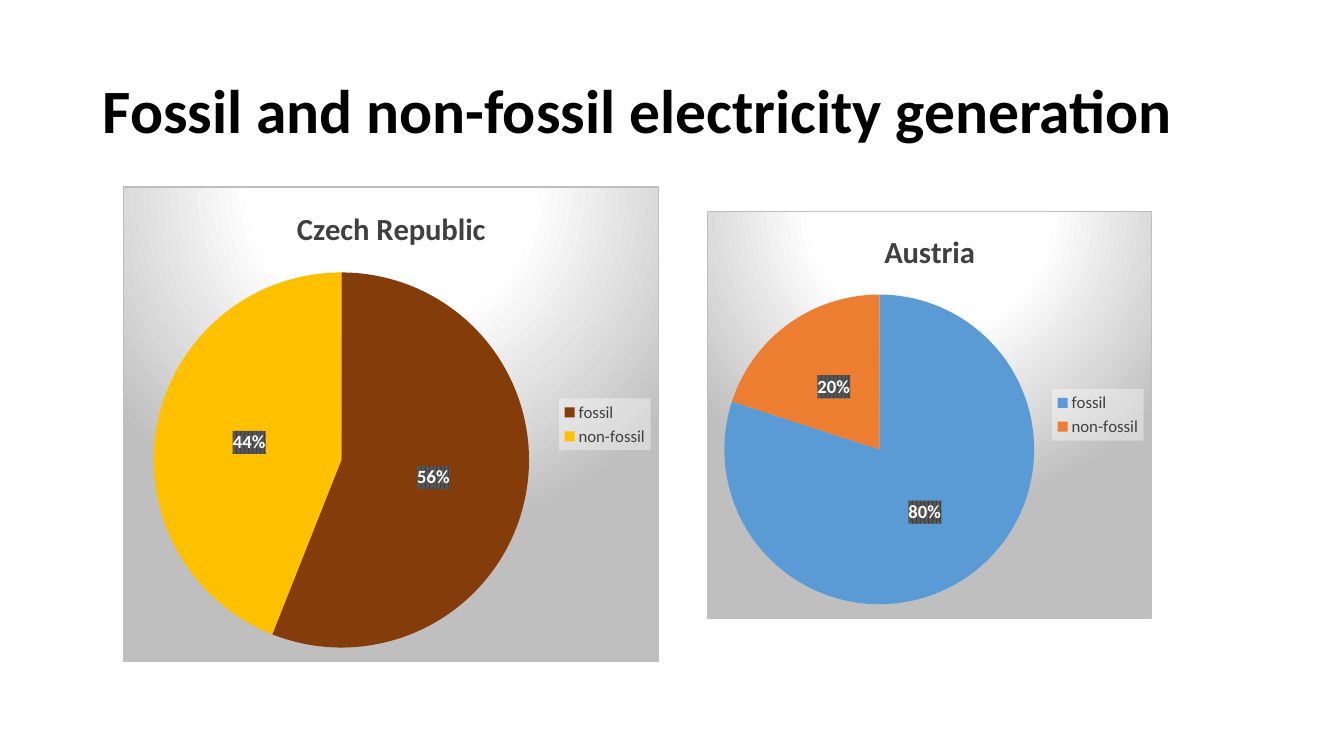
"""Build a slide comparing fossil and non-fossil electricity generation in two pie charts."""
from lxml.etree import fromstring
from pptx import Presentation
from pptx.chart.data import CategoryChartData
from pptx.dml.color import RGBColor
from pptx.enum.chart import XL_CHART_TYPE, XL_LABEL_POSITION, XL_LEGEND_POSITION
from pptx.enum.text import MSO_ANCHOR
from pptx.util import Pt

HEADING = "Fossil and non-fossil electricity generation"
HEADING_BOX = (92, 40, 1150, 145)
SOURCES = ("fossil", "non-fossil")
COUNTRIES = [
    {"name": "Czech Republic", "shares": (56, 44), "colors": ("843C0B", "FFC000"),
     "frame": (122, 185, 532, 472), "pie": (30, 85, 373)},
    {"name": "Austria", "shares": (80, 20), "colors": ("5B9BD5", "ED7D31"),
     "frame": (701, 209, 442, 405), "pie": (17, 83, 308)},
]

THEME = {
    "font": "Calibri",
    "heading": "000000", "text": "404040", "label": "FFFFFF",
    "panel_light": "FFFFFF", "panel_dark": "BFBFBF",
    "label_front": "404040", "label_back": "595959",
    "heading_size": 44, "name_size": 22, "label_size": 13.3,
    "legend_size": 12, "chart_size": 10,
}

NAMESPACES = ('xmlns:a="http://schemas.openxmlformats.org/drawingml/2006/main" '
              'xmlns:c="http://schemas.openxmlformats.org/drawingml/2006/chart"')
PANEL_STYLE = f"""<a:gradFill><a:gsLst>
<a:gs pos="0"><a:srgbClr val="{THEME['panel_light']}"/></a:gs>
<a:gs pos="39000"><a:srgbClr val="{THEME['panel_light']}"/></a:gs>
<a:gs pos="100000"><a:srgbClr val="{THEME['panel_dark']}"/></a:gs></a:gsLst>
<a:path path="circle"><a:fillToRect l="50000" t="-80000" r="50000" b="180000"/></a:path>
</a:gradFill><a:ln w="9525"><a:solidFill><a:srgbClr val="{THEME['panel_dark']}"/></a:solidFill></a:ln>"""
LEGEND_STYLE = f"""<a:solidFill><a:srgbClr val="{THEME['panel_light']}"><a:alpha val="39000"/>
</a:srgbClr></a:solidFill><a:ln><a:noFill/></a:ln>"""
LABEL_STYLE = f"""<a:pattFill prst="pct75"><a:fgClr><a:srgbClr val="{THEME['label_front']}"/></a:fgClr>
<a:bgClr><a:srgbClr val="{THEME['label_back']}"/></a:bgClr></a:pattFill><a:ln><a:noFill/></a:ln>"""


def px(length):
    return round(length * 9144)


def style_font(font, size, color, bold=False):
    font.name = THEME["font"]
    font.size = Pt(size)
    font.bold = bold
    font.color.rgb = RGBColor.from_string(color)


def write_text(frame, text, *, size, color, bold=False, spacing=None):
    paragraph = frame.paragraphs[0]
    paragraph.line_spacing = spacing
    run = paragraph.add_run()
    run.text = text
    style_font(run.font, size, color, bold)


def chart_node(tag, content):
    return fromstring(f"<c:{tag} {NAMESPACES}>{content}</c:{tag}>")


def style_area(parent, style):
    parent.xpath("./c:txPr")[0].addprevious(chart_node("spPr", style))


def place_pie(plot_area, frame, pie):
    left, top, diameter = pie
    width, height = frame[2:]
    fractions = {"x": left / width, "y": top / height,
                 "w": diameter / width, "h": diameter / height}
    content = '<c:layoutTarget val="inner"/><c:xMode val="edge"/><c:yMode val="edge"/>'
    content += "".join(f'<c:{key} val="{value:.4f}"/>' for key, value in fractions.items())
    for automatic in plot_area.xpath("./c:layout"):
        plot_area.remove(automatic)
    plot_area.insert(0, chart_node("layout", f"<c:manualLayout>{content}</c:manualLayout>"))


def add_country(slide, name, shares, colors, frame, pie):
    data = CategoryChartData()
    data.categories = SOURCES
    data.add_series(name, shares)
    chart = slide.shapes.add_chart(XL_CHART_TYPE.PIE, *map(px, frame), data).chart
    style_font(chart.font, THEME["chart_size"], THEME["heading"])
    write_text(chart.chart_title.text_frame, name,
               size=THEME["name_size"], color=THEME["text"], bold=True)
    chart.chart_title.include_in_layout = False

    chart.has_legend = True
    legend = chart.legend
    legend.position = XL_LEGEND_POSITION.RIGHT
    legend.include_in_layout = False
    style_font(legend.font, THEME["legend_size"], THEME["text"])

    plot = chart.plots[0]
    plot.vary_by_categories = True
    series = plot.series[0]
    for index, color in enumerate(colors):
        fill = series.points[index].format.fill
        fill.solid()
        fill.fore_color.rgb = RGBColor.from_string(color)
    labels = series.data_labels
    labels.show_value = False
    labels.show_percentage = True
    labels.number_format = "0%"
    labels.number_format_is_linked = False
    labels.position = XL_LABEL_POSITION.CENTER
    style_font(labels.font, THEME["label_size"], THEME["label"], bold=True)

    space = chart.element
    style_area(space, PANEL_STYLE)
    style_area(space.xpath(".//c:legend")[0], LEGEND_STYLE)
    style_area(space.xpath(".//c:ser/c:dLbls")[0], LABEL_STYLE)
    place_pie(space.xpath(".//c:plotArea")[0], frame, pie)
    if not space.xpath("./c:roundedCorners"):
        corners = chart_node("roundedCorners", "")
        corners.set("val", "0")
        space.xpath("./c:chart")[0].addprevious(corners)


def main():
    deck = Presentation()
    deck.slide_width, deck.slide_height = px(1333), px(750)
    slide = deck.slides.add_slide(deck.slide_layouts[6])
    heading = slide.shapes.add_textbox(*map(px, HEADING_BOX)).text_frame
    heading.word_wrap = True
    heading.vertical_anchor = MSO_ANCHOR.MIDDLE
    write_text(heading, HEADING, size=THEME["heading_size"], color=THEME["heading"],
               bold=True, spacing=0.9)
    for country in COUNTRIES:
        add_country(slide, **country)
    deck.save("out.pptx")


if __name__ == "__main__":
    main()
